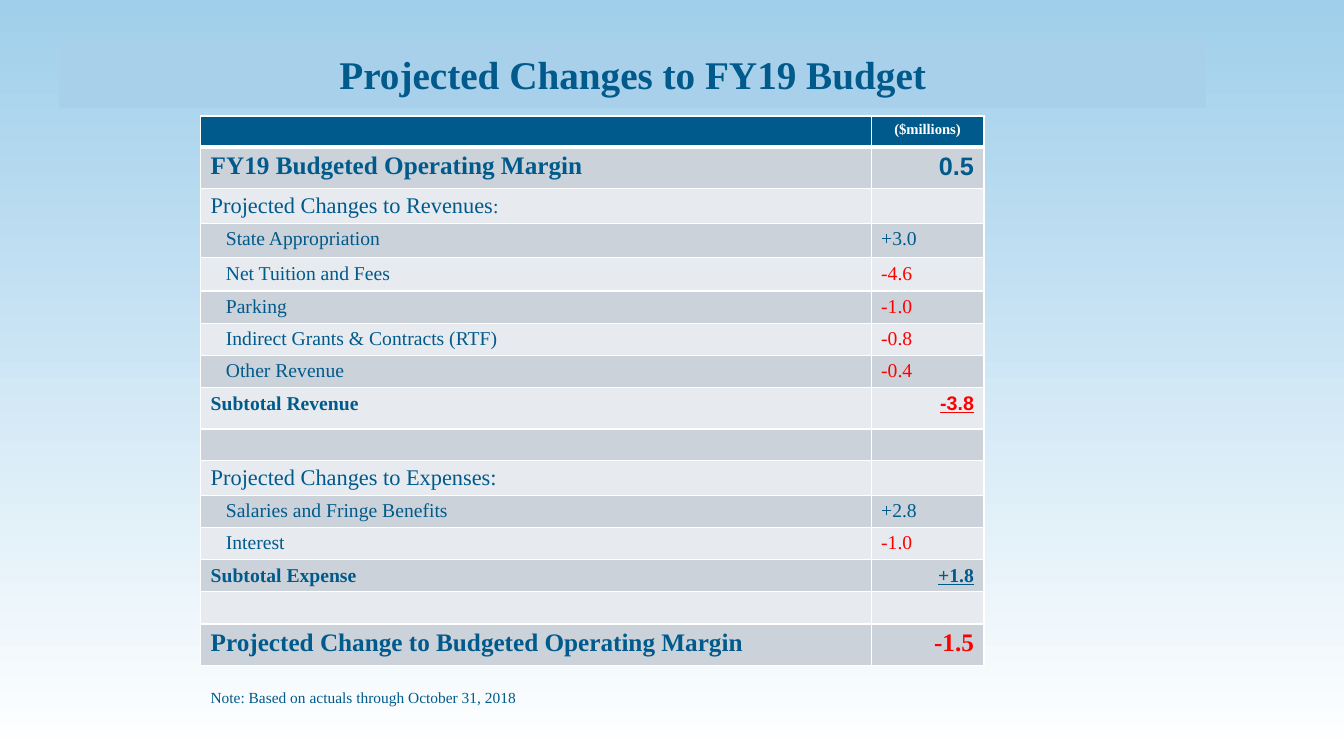
from dataclasses import dataclass

from lxml import etree
from pptx import Presentation
from pptx.dml.color import RGBColor
from pptx.enum import shapes, text
from pptx.oxml import ns
from pptx.util import Inches, Pt

SERIF, SANS = "Times New Roman", "Arial"
BLUE, RED, WHITE = "005A8B", "FF0000", "FFFFFF"
BANDS = ("E7EAEE", "CCD2DA")
LEFT, CENTER, RIGHT = text.PP_ALIGN.LEFT, text.PP_ALIGN.CENTER, text.PP_ALIGN.RIGHT


@dataclass
class Style:
    size: float = 14
    bold: bool = False
    color: str = BLUE
    font: str = SERIF
    underline: bool = False


@dataclass
class BudgetRow:
    height: float
    label: str = ""
    value: str = ""
    size: float = 14
    total: bool = False
    indent: bool = False
    value_font: str = SERIF
    underline: bool = False
    colon_size: float = 0


ROWS = [
    BudgetRow(0.41, "FY19 Budgeted Operating Margin", "0.5", 18, total=True, value_font=SANS),
    BudgetRow(0.34, "Projected Changes to Revenues", size=16, colon_size=14),
    BudgetRow(0.34, "State Appropriation", "+3.0", indent=True),
    BudgetRow(0.33, "Net Tuition and Fees", "-4.6", indent=True),
    BudgetRow(0.32, "Parking", "-1.0", indent=True),
    BudgetRow(0.32, "Indirect Grants & Contracts (RTF)", "-0.8", indent=True),
    BudgetRow(0.32, "Other Revenue", "-0.4", indent=True),
    BudgetRow(0.41, "Subtotal Revenue", "-3.8", total=True, value_font=SANS, underline=True),
    BudgetRow(0.31),
    BudgetRow(0.34, "Projected Changes to Expenses", size=16, colon_size=16),
    BudgetRow(0.32, "Salaries and Fringe Benefits", "+2.8", indent=True),
    BudgetRow(0.32, "Interest", "-1.0", indent=True),
    BudgetRow(0.32, "Subtotal Expense", "+1.8", total=True, underline=True),
    BudgetRow(0.32),
    BudgetRow(0.41, "Projected Change to Budgeted Operating Margin", "-1.5", 18, total=True),
]


def rgb(value: str) -> RGBColor:
    return RGBColor.from_string(value)


def add_run(p, content: str, style: Style) -> None:
    r = p.add_run()
    r.text = content
    r.font.size = Pt(style.size)
    r.font.bold = style.bold
    r.font.name = style.font
    r.font.underline = style.underline
    r.font.color.rgb = rgb(style.color)


def format_cell(cell, fill: str, bottom: float = 1, top: float = 1) -> None:
    """Set white borders, then the fill that must follow them."""
    tc_pr = cell._tc.get_or_add_tcPr()
    for tag, width in (("lnL", 1), ("lnR", 1), ("lnT", top), ("lnB", bottom)):
        ln = etree.SubElement(tc_pr, ns.qn(f"a:{tag}"), w=str(Pt(width)))
        solid = etree.SubElement(ln, ns.qn("a:solidFill"))
        etree.SubElement(solid, ns.qn("a:srgbClr"), val=WHITE)
    cell.fill.solid()
    cell.fill.fore_color.rgb = rgb(fill)


def write_cell(cell, content: str, style: Style, align=LEFT) -> None:
    p = cell.text_frame.paragraphs[0]
    p.alignment = align
    if content:
        add_run(p, content, style)
    else:
        p.font.size = Pt(11)


def add_title(s) -> None:
    sp = s.shapes.add_shape(shapes.MSO_SHAPE.RECTANGLE, Inches(0.59), Inches(0.4),
                            Inches(11.37), Inches(0.67))
    sp.shadow.inherit = False
    sp.fill.solid()
    sp.fill.fore_color.rgb = rgb("A9D0EA")
    sp.line.fill.background()
    tf = sp.text_frame
    tf.word_wrap = True
    tf.vertical_anchor = text.MSO_ANCHOR.MIDDLE
    p = tf.paragraphs[0]
    p.alignment = CENTER
    add_run(p, "Projected Changes to FY19 Budget", Style(28, bold=True))


def add_budget_table(s) -> None:
    header_height = 0.31
    height = header_height + sum(row.height for row in ROWS)
    table = s.shapes.add_table(len(ROWS) + 1, 2, Inches(1.99), Inches(1.15),
                               Inches(7.77), Inches(height)).table
    table.first_row = table.horz_banding = False
    for column, width in zip(table.columns, (6.65, 1.12)):
        column.width = Inches(width)

    # Header row
    table.rows[0].height = Inches(header_height)
    for col, heading in enumerate(("", "($millions)")):
        cell = table.cell(0, col)
        format_cell(cell, BLUE, bottom=3)
        write_cell(cell, heading, Style(10.5, True, WHITE), CENTER)

    # Budget rows
    for i, row in enumerate(ROWS, start=1):
        table.rows[i].height = Inches(row.height)
        label, value = table.cell(i, 0), table.cell(i, 1)
        for cell in (label, value):
            format_cell(cell, BANDS[i % 2], top=3 if i == 1 else 1)
        if row.indent:
            label.margin_left = Inches(0.25)
        write_cell(label, row.label, Style(row.size, row.total))
        if row.colon_size:
            add_run(label.text_frame.paragraphs[0], ":", Style(row.colon_size))
        color = RED if row.value.startswith("-") else BLUE
        write_cell(value, row.value,
                   Style(row.size, row.total, color, row.value_font, row.underline),
                   RIGHT if row.total else LEFT)


def add_note(s) -> None:
    sp = s.shapes.add_textbox(Inches(1.99), Inches(6.78), Inches(7.77), Inches(0.29))
    tf = sp.text_frame
    tf.word_wrap = True
    tf.auto_size = text.MSO_AUTO_SIZE.SHAPE_TO_FIT_TEXT
    add_run(tf.paragraphs[0], "Note: Based on actuals through October 31, 2018", Style(11))


def main() -> None:
    prs = Presentation()
    prs.slide_width, prs.slide_height = Inches(13.33), Inches(7.5)
    s = prs.slides.add_slide(prs.slide_layouts[6])

    # Background fading downwards
    fill = s.background.fill
    fill.gradient()
    fill.gradient_angle = 270
    for stop, color in zip(fill.gradient_stops, ("A0CFEB", WHITE)):
        stop.color.rgb = rgb(color)

    add_title(s)
    add_budget_table(s)
    add_note(s)
    prs.save("out.pptx")


if __name__ == "__main__":
    main()
